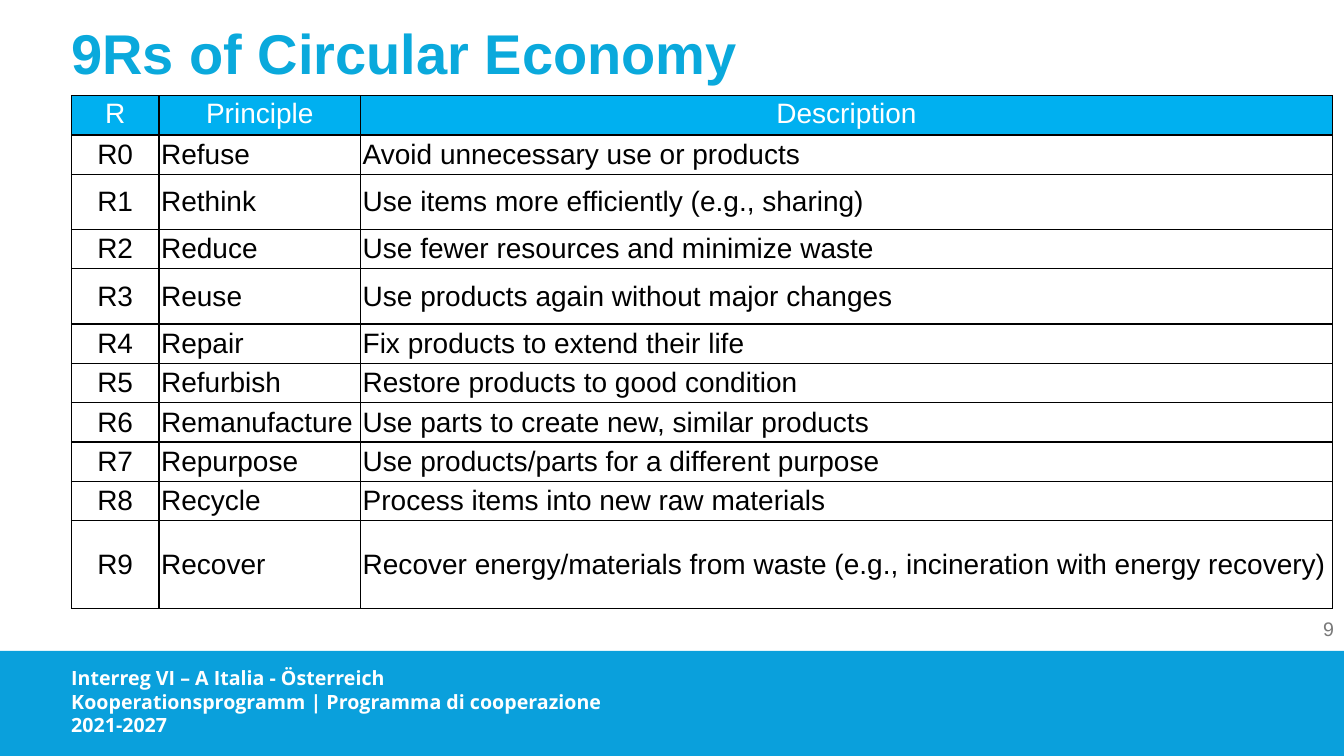
from dataclasses import dataclass

from lxml import etree
from pptx import Presentation
from pptx.dml.color import RGBColor
from pptx.enum.shapes import MSO_SHAPE
from pptx.enum.text import MSO_ANCHOR, PP_ALIGN
from pptx.oxml.ns import qn
from pptx.util import Pt

LEFT, CENTER, RIGHT = PP_ALIGN.LEFT, PP_ALIGN.CENTER, PP_ALIGN.RIGHT
TOP, MIDDLE = MSO_ANCHOR.TOP, MSO_ANCHOR.MIDDLE
RECTANGLE = MSO_SHAPE.RECTANGLE

TITLE = "9Rs of Circular Economy"
HEADER = ("R", "Principle", "Description")
PRINCIPLES = [
    ("Refuse", "Avoid unnecessary use or products"),
    ("Rethink", "Use items more efficiently (e.g., sharing)"),
    ("Reduce", "Use fewer resources and minimize waste"),
    ("Reuse", "Use products again without major changes"),
    ("Repair", "Fix products to extend their life"),
    ("Refurbish", "Restore products to good condition"),
    ("Remanufacture", "Use parts to create new, similar products"),
    ("Repurpose", "Use products/parts for a different purpose"),
    ("Recycle", "Process items into new raw materials"),
    ("Recover", "Recover energy/materials from waste "
                "(e.g., incineration with energy recovery)"),
]
FOOTER = [
    ("Interreg VI – A Italia - Österreich",
     "Kooperationsprogramm | Programma di cooperazione"),
    ("2021-2027",),
]
PAGE_NUMBER = "9"


@dataclass(frozen=True)
class Theme:
    font: str = "Arial"
    footer_font: str = "Open Sans"
    title_color: str = "0AA9DC"
    band: str = "0AA0DC"
    header_fill: str = "00B0F0"
    white: str = "FFFFFF"
    black: str = "000000"
    gray: str = "797979"
    title_size: int = 40
    table_size: int = 20
    small_size: int = 14


T = Theme()
SLIDE_W, SLIDE_H = 960, 540
BAND_TOP = 465
TABLE_LEFT, TABLE_TOP = 51, 68.4
COLUMN_WIDTHS = (62.6, 144, 694.2)
ROW_HEIGHT = 28.1
TALL_ROWS = {2: 39.4, 4: 39.4, 10: 62.7}
CELL_MARGIN = 1.5
BORDER = 1


def set_margins(target, x, y):
    target.margin_left = target.margin_right = Pt(x)
    target.margin_top = target.margin_bottom = Pt(y)


def add_run(p, text, size, color, font=T.font, bold=False):
    r = p.add_run()
    r.text = text
    r.font.name, r.font.size, r.font.bold = font, Pt(size), bold
    r.font.color.rgb = RGBColor.from_string(color)


def add_box(s, left, top, width, height, margins=(7.2, 3.6), anchor=TOP):
    sp = s.shapes.add_textbox(Pt(left), Pt(top), Pt(width), Pt(height))
    tf = sp.text_frame
    tf.word_wrap = True
    tf.vertical_anchor = anchor
    set_margins(tf, *margins)
    return tf


def add_borders(cell):
    """Put the four side lines ahead of the fill, as the schema asks."""
    tc_pr = cell._tc.get_or_add_tcPr()
    for i, side in enumerate(("a:lnL", "a:lnR", "a:lnT", "a:lnB")):
        ln = etree.Element(qn(side), w=str(Pt(BORDER)))
        fill = etree.SubElement(ln, qn("a:solidFill"))
        etree.SubElement(fill, qn("a:srgbClr"), val=T.black)
        tc_pr.insert(i, ln)


def fill_cell(cell, text, is_header, align):
    set_margins(cell, CELL_MARGIN, CELL_MARGIN)
    cell.vertical_anchor = TOP if is_header else MIDDLE
    if is_header:
        cell.fill.solid()
        cell.fill.fore_color.rgb = RGBColor.from_string(T.header_fill)
    else:
        cell.fill.background()
    add_borders(cell)
    p = cell.text_frame.paragraphs[0]
    p.alignment = align
    add_run(p, text, T.table_size, T.white if is_header else T.black)


def add_principles_table(s):
    rows = [HEADER] + [(f"R{i}", *row) for i, row in enumerate(PRINCIPLES)]
    heights = [TALL_ROWS.get(i, ROW_HEIGHT) for i in range(len(rows))]
    table = s.shapes.add_table(
        len(rows), len(HEADER), Pt(TABLE_LEFT), Pt(TABLE_TOP),
        Pt(sum(COLUMN_WIDTHS)), Pt(sum(heights))).table
    table.horz_banding = False
    for column, width in zip(table.columns, COLUMN_WIDTHS):
        column.width = Pt(width)
    for i, (row, height) in enumerate(zip(rows, heights)):
        table.rows[i].height = Pt(height)
        for j, text in enumerate(row):
            align = CENTER if i == 0 or j == 0 else LEFT
            fill_cell(table.cell(i, j), text, i == 0, align)


def add_footer(s):
    band = s.shapes.add_shape(RECTANGLE, 0, Pt(BAND_TOP), Pt(SLIDE_W),
                              Pt(SLIDE_H - BAND_TOP))
    band.shadow.inherit = False
    band.fill.solid()
    band.fill.fore_color.rgb = RGBColor.from_string(T.band)
    band.line.fill.background()
    tf = add_box(s, 43.8, 472.3, 430.6, 58.3)
    for i, lines in enumerate(FOOTER):
        p = tf.add_paragraph() if i else tf.paragraphs[0]
        for j, line in enumerate(lines):
            if j:
                p.add_line_break()
            add_run(p, line, T.small_size, T.white, T.footer_font, True)


def main():
    prs = Presentation()
    prs.slide_width, prs.slide_height = Pt(SLIDE_W), Pt(SLIDE_H)
    s = prs.slides.add_slide(prs.slide_layouts[6])
    add_footer(s)

    p = add_box(s, TABLE_LEFT, 18.7, 864.7, 56.9, (0, 0)).paragraphs[0]
    p.line_spacing = 0.9
    add_run(p, TITLE, T.title_size, T.title_color, bold=True)

    p = add_box(s, 923.5, 435, 36.5, 28.8, anchor=MIDDLE).paragraphs[0]
    p.alignment = RIGHT
    add_run(p, PAGE_NUMBER, T.small_size, T.gray)

    add_principles_table(s)
    prs.save("out.pptx")


if __name__ == "__main__":
    main()
